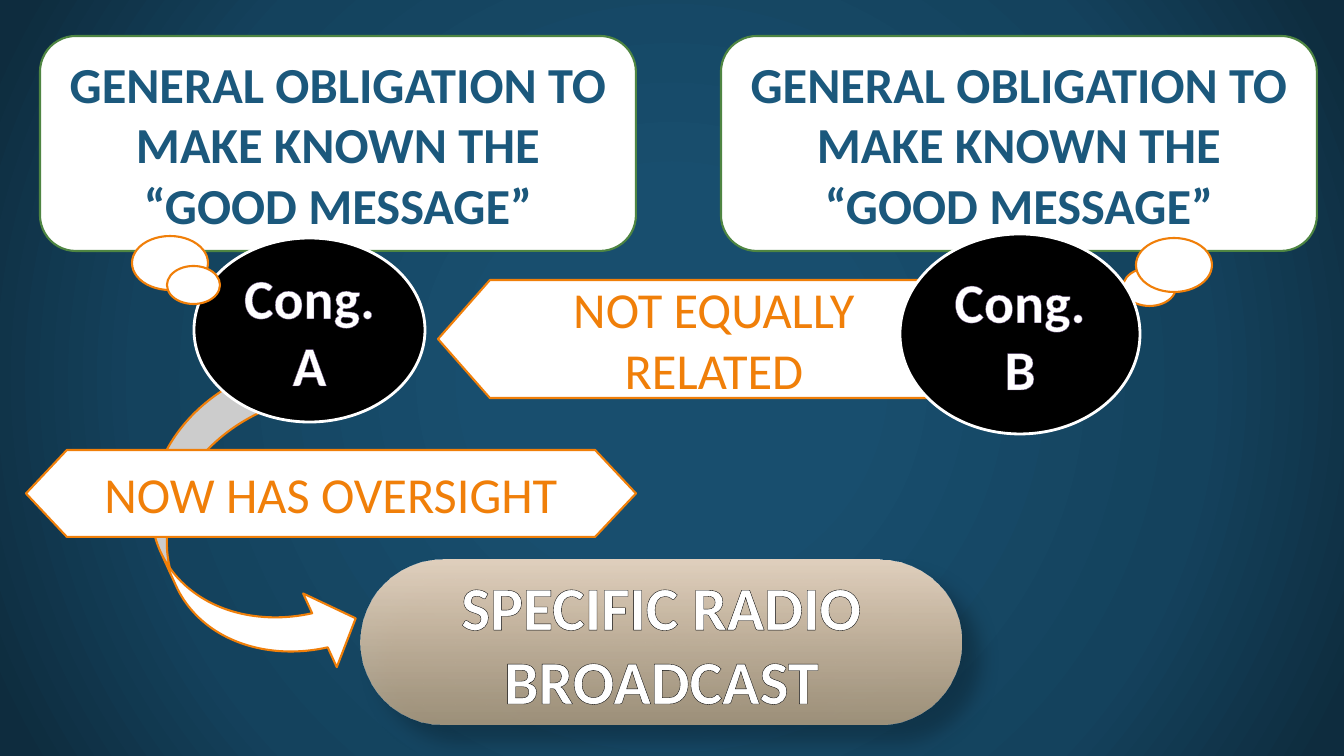
import pptx
import pptx.dml.color
import pptx.enum.shapes
import pptx.enum.text
import pptx.oxml
import pptx.oxml.ns
import pptx.util
from dataclasses import dataclass

SCALE = 914400 / 100.8
SHAPE = pptx.enum.shapes.MSO_SHAPE
NS = pptx.oxml.ns.nsdecls("a")


@dataclass(frozen=True)
class Theme:
    font: str = "Calibri"
    white: str = "FFFFFF"
    black: str = "000000"
    orange: str = "F07F09"
    green: str = "4E8542"
    blue: str = "1B587C"
    purple: str = "604878"
    sand: str = "E2D1BE"
    tan: str = "CEB18C"
    backdrop: tuple = ((0, "184E6E"), (23, "184E6E"), (69, "14425D"), (97, "0E2C3E"))
    label: int = 36
    name: int = 40
    goal: int = 44


THEME = Theme()


def px(n):
    return pptx.util.Emu(round(n * SCALE))


def rgb(code):
    return pptx.dml.color.RGBColor.from_string(code)


def gradient(stops, direction):
    items = "".join(
        f'<a:gs pos="{pos * 1000}"><a:srgbClr val="{color}">'
        f'<a:alpha val="{alpha * 1000}"/></a:srgbClr></a:gs>'
        for pos, color, alpha in stops)
    return pptx.oxml.parse_xml(
        f'<a:gradFill {NS} rotWithShape="1"><a:gsLst>{items}</a:gsLst>{direction}</a:gradFill>')


def paint_background(s):
    fill = s.background.fill
    fill.solid()
    solid = s.element.find(".//" + pptx.oxml.ns.qn("a:solidFill"))
    circle = ('<a:path path="circle"><a:fillToRect l="50000" t="50000" '
              'r="50000" b="50000"/></a:path>')
    stops = [(pos, color, 100) for pos, color in THEME.backdrop]
    solid.getparent().replace(solid, gradient(stops, circle))


def add_shape(s, kind, box, line=None, width=1.5, fill=THEME.white, adjust=()):
    sp = s.shapes.add_shape(kind, *map(px, box))
    sp.shadow.inherit = False
    sp.fill.solid()
    sp.fill.fore_color.rgb = rgb(fill)
    if line:
        sp.line.color.rgb = rgb(line)
        sp.line.width = pptx.util.Pt(width)
    else:
        sp.line.fill.background()
    for i, value in enumerate(adjust):
        sp.adjustments[i] = value
    return sp


def write(sp, text, size, color, bold=False, outline=None):
    tf = sp.text_frame
    tf.word_wrap = True
    tf.vertical_anchor = pptx.enum.text.MSO_ANCHOR.MIDDLE
    p = tf.paragraphs[0]
    p.alignment = pptx.enum.text.PP_ALIGN.CENTER
    r = p.add_run()
    r.text = text
    values = {"name": THEME.font, "size": pptx.util.Pt(size), "bold": bold}
    for key, value in values.items():
        setattr(r.font, key, value)
    r.font.color.rgb = rgb(color)
    if outline:
        line_color, line_width = outline
        r._r.get_or_add_rPr().insert(0, pptx.oxml.parse_xml(
            f'<a:ln {NS} w="{pptx.util.Pt(line_width)}"><a:solidFill>'
            f'<a:srgbClr val="{line_color}"/></a:solidFill></a:ln>'))


def add_obligation(s, box):
    sp = add_shape(s, SHAPE.ROUNDED_RECTANGLE, box, THEME.green)
    write(sp, "GENERAL OBLIGATION TO MAKE KNOWN THE “GOOD MESSAGE”",
          THEME.label, THEME.blue, True)


def add_broadcast(s, box):
    sp = add_shape(s, SHAPE.ROUNDED_RECTANGLE, box, adjust=[0.5])
    props = sp._element.spPr
    solid = props.find(pptx.oxml.ns.qn("a:solidFill"))
    stops = [(0, THEME.sand, 100), (100, THEME.tan, 74)]
    props.replace(solid, gradient(stops, '<a:lin ang="5400000" scaled="0"/>'))
    effects = props.find(pptx.oxml.ns.qn("a:effectLst"))
    blur, distance = pptx.util.Pt(15), pptx.util.Pt(18)
    effects.append(pptx.oxml.parse_xml(
        f'<a:outerShdw {NS} blurRad="{blur}" dist="{distance}" dir="2700000" '
        f'algn="tl" rotWithShape="0"><a:srgbClr val="{THEME.black}">'
        '<a:alpha val="30000"/></a:srgbClr></a:outerShdw>'))
    write(sp, "SPECIFIC RADIO BROADCAST", THEME.goal, THEME.white, True,
          (THEME.black, 1.06))


def add_sweep(s, box):
    sp = add_shape(s, SHAPE.CURVED_RIGHT_ARROW, box, THEME.orange,
                   adjust=[0.25, 0.54, 0.25])
    sp.rotation = 335.5


def add_arrow(s, kind, box, text, head):
    sp = add_shape(s, kind, box, THEME.orange, adjust=[1, head])
    write(sp, text, THEME.label, THEME.orange)


def add_bubbles(s, x, y, bubbles):
    for dx, dy, w, h in bubbles:
        add_shape(s, SHAPE.FLOWCHART_CONNECTOR, (x + dx, y + dy, w, h), THEME.orange)


def add_congregation(s, box, name, behind=(), front=()):
    x, y = box[:2]
    add_bubbles(s, x, y, behind)
    sp = add_shape(s, SHAPE.OVAL, box, THEME.white, 2, THEME.black)
    write(sp, name, THEME.name, THEME.white, True, (THEME.purple, 0.8))
    add_bubbles(s, x, y, front)


def main():
    prs = pptx.Presentation()
    prs.slide_width, prs.slide_height = px(1344), px(756)
    s = prs.slides.add_slide(prs.slide_layouts[6])
    paint_background(s)
    for x in (40, 721):
        add_obligation(s, (x, 36, 596, 215))
    add_broadcast(s, (361, 560, 601, 165))
    add_sweep(s, (166, 395, 150, 305))
    add_congregation(s, (194, 238, 231, 184), "Cong. A",
                     front=[(-62, -2, 76, 54), (-27, 28, 53, 38)])
    add_arrow(s, SHAPE.LEFT_RIGHT_ARROW, (26, 450, 610, 87), "NOW HAS OVERSIGHT", 0.47)
    add_arrow(s, SHAPE.LEFT_ARROW, (438, 280, 500, 118), "NOT EQUALLY RELATED", 0.44)
    add_congregation(s, (900, 234, 240, 200), "Cong. B",
                     behind=[(223, 34, 53, 38), (236, 4, 76, 54)])
    prs.save("out.pptx")


if __name__ == "__main__":
    main()
